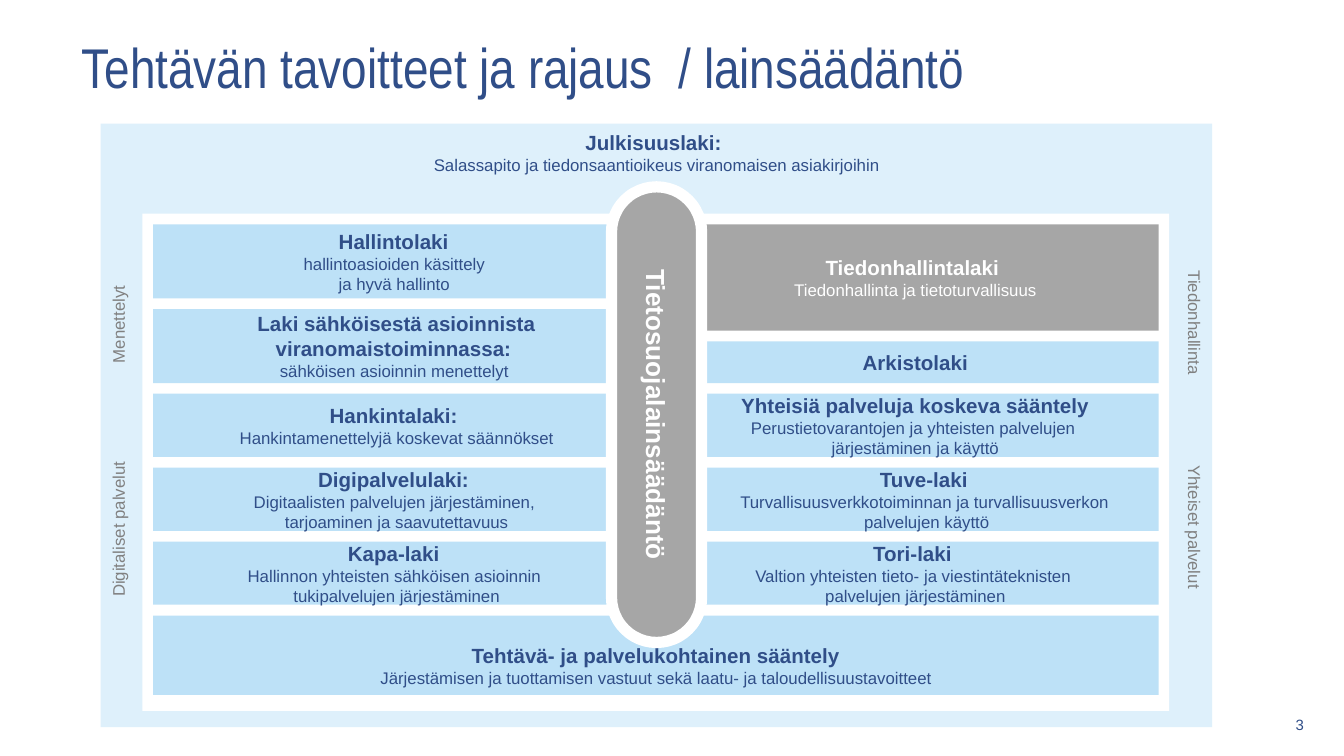
import pptx
import pptx.util
import pptx.dml.color
import pptx.enum.shapes
import pptx.enum.text

Inches = pptx.util.Inches
Pt = pptx.util.Pt
ALIGN = pptx.enum.text.PP_ALIGN
ANCHOR = pptx.enum.text.MSO_ANCHOR

COLORS = {
    "navy": "304E88",
    "pale": "DEF0FB",
    "sky": "BDE1F7",
    "gray": "A6A6A6",
    "label": "808080",
    "white": "FFFFFF",
}
GAP = 0.08

PROCEDURES = [
    (0.55, "Hallintolaki ", ["hallintoasioiden käsittely ", "ja hyvä hallinto "], {}),
    (0.55, "Laki sähköisestä asioinnista viranomaistoiminnassa: ",
     ["sähköisen asioinnin menettelyt "], {}),
    (0.47, "Hankintalaki: ", ["Hankintamenettelyjä koskevat säännökset"], {}),
    (0.47, "Digipalvelulaki: ",
     ["Digitaalisten palvelujen järjestäminen, ", "tarjoaminen ja saavutettavuus"], {}),
    (0.47, "Kapa-laki ",
     ["Hallinnon yhteisten sähköisen asioinnin ", "tukipalvelujen järjestäminen"], {}),
]
INFORMATION = [
    (0.79, "Tiedonhallintalaki ", ["Tiedonhallinta ja tietoturvallisuus"],
     {"fill": "gray", "color": "white"}),
    (0.31, "Arkistolaki", [], {}),
    (0.47, "Yhteisiä palveluja koskeva sääntely",
     ["Perustietovarantojen ja yhteisten palvelujen ", "järjestäminen ja käyttö"],
     {"wrap": False}),
    (0.47, "Tuve-laki ",
     ["Turvallisuusverkkotoiminnan ja turvallisuusverkon ", "palvelujen käyttö"],
     {"wrap": False, "indent": 0.17}),
    (0.47, "Tori-laki ",
     ["Valtion yhteisten tieto- ja viestintäteknisten ", "palvelujen järjestäminen"],
     {"wrap": False}),
]


def rgb(name):
    return pptx.dml.color.RGBColor.from_string(COLORS[name])


def write_text(frame, text, size=9, color="navy", bold=False, font="Arial",
               align=ALIGN.CENTER):
    paragraph = frame.paragraphs[0]
    if paragraph.runs:
        paragraph = frame.add_paragraph()
    paragraph.alignment = align
    run = paragraph.add_run()
    run.text = text
    run.font.size = Pt(size)
    run.font.bold = bold
    run.font.name = font
    run.font.color.rgb = rgb(color)


def add_panel(slide, box, fill, radius=0, anchor=ANCHOR.MIDDLE, wrap=True):
    panel = slide.shapes.add_shape(
        pptx.enum.shapes.MSO_SHAPE.ROUNDED_RECTANGLE, *map(Inches, box))
    panel.adjustments[0] = radius
    panel.shadow.inherit = False
    panel.fill.solid()
    panel.fill.fore_color.rgb = rgb(fill)
    panel.line.fill.background()
    panel.text_frame.word_wrap = wrap
    panel.text_frame.vertical_anchor = anchor
    return panel


def add_label(slide, box, text, rotation=0, wrap=True, anchor=ANCHOR.MIDDLE, **text_format):
    label = slide.shapes.add_textbox(*map(Inches, box))
    label.rotation = rotation
    label.text_frame.word_wrap = wrap
    label.text_frame.vertical_anchor = anchor
    write_text(label.text_frame, text, **text_format)


def add_law(slide, box, name, details, fill="sky", color="navy", **panel_format):
    law = add_panel(slide, box, fill, **panel_format)
    write_text(law.text_frame, name, size=11, color=color, bold=True)
    for detail in details:
        write_text(law.text_frame, detail, color=color)


def add_law_column(slide, box, laws):
    left, top, width, _ = box
    for height, name, details, law_format in laws:
        options = dict(law_format)
        indent = options.pop("indent", 0)
        add_law(slide, (left + indent, top, width - indent, height),
                name, details, **options)
        top += height + GAP


def add_spine(slide, box, text):
    left, top, width, height = box
    middle_x, middle_y = left + width / 2, top + height / 2
    spine = add_panel(slide, (middle_x - height / 2, middle_y - width / 2, height, width),
                      "gray", radius=0.5, wrap=False)
    spine.rotation = 90
    spine.line.color.rgb = rgb("white")
    spine.line.width = Pt(6)
    write_text(spine.text_frame, text, size=14, color="white", bold=True)


def add_side_labels(slide, middle_x, rotation, labels):
    for text, length, middle_y in labels:
        add_label(slide, (middle_x - length / 2, middle_y - 0.125, length, 0.25), text,
                  rotation=rotation, wrap=False, anchor=ANCHOR.TOP,
                  color="label", align=ALIGN.LEFT)


def add_legislation_map(slide, box):
    left, top, width, height = box
    add_law(slide, box, "Julkisuuslaki: ",
            ["Salassapito ja tiedonsaantioikeus viranomaisen asiakirjoihin"],
            fill="pale", anchor=ANCHOR.TOP)
    add_panel(slide, (left + 0.31, top + 0.67, width - 0.63, 3.7), "white")

    column_top, column_height = top + 0.75, 2.83
    add_law_column(slide, (left + 0.39, column_top, 3.62, column_height), PROCEDURES)
    add_law_column(slide, (left + 4.25, column_top, 3.62, column_height), INFORMATION)
    add_law(slide, (left + 0.39, column_top + column_height + GAP, 7.48, 0.59),
            "Tehtävä- ja palvelukohtainen sääntely",
            ["Järjestämisen ja tuottamisen vastuut sekä laatu- ja taloudellisuustavoitteet"],
            anchor=ANCHOR.BOTTOM, wrap=False)
    add_spine(slide, (left + 3.8, top + 0.47, 0.67, 3.39), "Tietosuojalainsäädäntö")

    upper, lower = top + 1.49, top + 3.01
    add_side_labels(slide, left + 0.13, 270, [
        ("Menettelyt", 0.78, upper), ("Digitaliset palvelut", 1.22, lower)])
    add_side_labels(slide, left + width - 0.13, 90, [
        ("Tiedonhallinta", 0.99, upper), ("Yhteiset palvelut", 1.13, lower)])


def main():
    presentation = pptx.Presentation()
    presentation.slide_width = Inches(10)
    presentation.slide_height = presentation.slide_width * 9 // 16
    slide = presentation.slides.add_slide(presentation.slide_layouts[6])
    add_legislation_map(slide, (0.75, 0.92, 8.27, 4.49))
    add_label(slide, (0.51, 0.06, 9.13, 0.86),
              "Tehtävän tavoitteet ja rajaus  / lainsäädäntö",
              size=30, font="Arial Narrow", align=ALIGN.LEFT)
    add_label(slide, (9.28, 5.27, 0.52, 0.24), "3", size=8, align=ALIGN.RIGHT)
    presentation.save("out.pptx")


if __name__ == "__main__":
    main()
